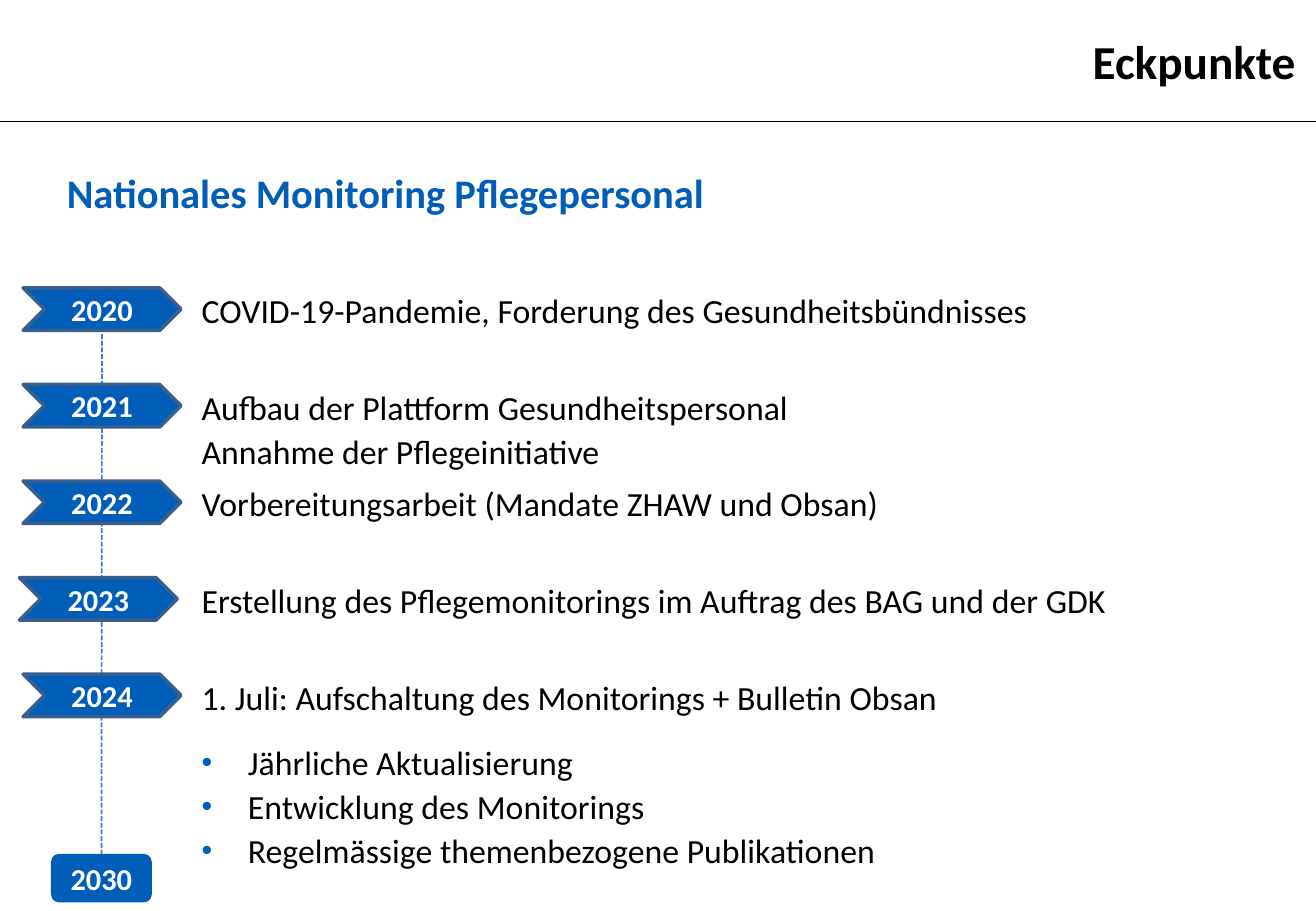
from lxml.etree import SubElement
from pptx import Presentation
from pptx.dml.color import RGBColor
from pptx.enum.dml import MSO_LINE as Dash
from pptx.enum.shapes import MSO_CONNECTOR as Conn, MSO_SHAPE as Shape
from pptx.enum.text import MSO_ANCHOR as Anchor, MSO_AUTO_SIZE as Fit, PP_ALIGN as Align
from pptx.oxml.ns import qn
from pptx.util import Inches, Pt

BLUE = RGBColor(0x00, 0x5E, 0xB8)
EDGE = RGBColor(0x3A, 0x5F, 0x8C)
DASH = RGBColor(0x4B, 0x7E, 0xBC)
BLACK = RGBColor(0, 0, 0)
WHITE = RGBColor(255, 255, 255)

TITLE = "Eckpunkte"
HEAD = "Nationales Monitoring Pflegepersonal"
YEARS = [
    ("2020", 0.19, ["COVID-19-Pandemie, Forderung des Gesundheitsbündnisses"]),
    ("2021", 0.19, ["Aufbau der Plattform Gesundheitspersonal",
                    "Annahme der Pflegeinitiative"]),
    ("2022", 0.19, ["Vorbereitungsarbeit (Mandate ZHAW und Obsan)"]),
    ("2023", 0.16, ["Erstellung des Pflegemonitorings im Auftrag des BAG und der GDK"]),
    ("2024", 0.19, ["1. Juli: Aufschaltung des Monitorings + Bulletin Obsan"]),
]
GOAL = "2030"
TASKS = [
    "Jährliche Aktualisierung",
    "Entwicklung des Monitorings",
    "Regelmässige themenbezogene Publikationen",
]

TOP, STEP, LINE = 2.37, 0.795, 0.36
LEFT, WIDE = 1.66, 8.86

FLAT = dict(margin_left=0, margin_right=0, margin_top=0, margin_bottom=0,
            word_wrap=True, auto_size=Fit.NONE, vertical_anchor=Anchor.TOP)
MID = dict(FLAT, vertical_anchor=Anchor.MIDDLE)
PLAIN = dict(size=Pt(20), name="Calibri", bold=False)
BOLD = dict(PLAIN, bold=True)


def apply(item, vals):
    for key, val in vals.items():
        setattr(item, key, val)


def place(item, *box):
    apply(item, dict(zip(("left", "top", "width", "height"), map(Inches, box))))


def write(para, text, font, color, **vals):
    para.text = text
    apply(para, dict(space_before=Pt(0), **vals))
    apply(para.font, font)
    para.font.color.rgb = color


def label(text, *box, font=PLAIN, color=BLACK, **vals):
    frame = slide.shapes.add_textbox(*map(Inches, box)).text_frame
    apply(frame, FLAT)
    write(frame.paragraphs[0], text, font, color, **vals)


def badge(kind, text, *box):
    shape = slide.shapes.add_shape(kind, *map(Inches, box))
    shape.shadow.inherit = False
    shape.fill.solid()
    shape.fill.fore_color.rgb = BLUE
    apply(shape.text_frame, MID)
    write(shape.text_frame.paragraphs[0], text, dict(BOLD, size=Pt(18)), WHITE,
          alignment=Align.CENTER)
    return shape


def rule(color, *ends):
    line = slide.shapes.add_connector(Conn.STRAIGHT, *map(Inches, ends))
    SubElement(line._element.spPr, qn("a:effectLst"))
    line.line.color.rgb = color
    line.line.width = Pt(1)
    return line


def bullet(para):
    props = para._p.get_or_add_pPr()
    props.set("marL", str(Inches(0.38)))
    props.set("indent", str(-Inches(0.38)))
    tint = SubElement(props, qn("a:buClr"))
    SubElement(tint, qn("a:srgbClr"), val=str(BLUE))
    SubElement(props, qn("a:buSzPct"), val="90000")
    SubElement(props, qn("a:buFont"), typeface="Arial")
    SubElement(props, qn("a:buChar"), char="•")


deck = Presentation()
deck.slide_width, deck.slide_height = Inches(10.83), Inches(7.5)
slide = deck.slides.add_slide(deck.slide_layouts[1])

title, body = slide.placeholders
place(title, 3.63, 0, 7.13, 1)
title.text_frame.vertical_anchor = Anchor.MIDDLE
write(title.text_frame.paragraphs[0], TITLE, dict(BOLD, size=Pt(28)), BLACK,
      alignment=Align.RIGHT)

place(body, LEFT, 6.08, WIDE, 1.2)
apply(body.text_frame, FLAT)
for num, task in enumerate(TASKS):
    para = body.text_frame.add_paragraph() if num else body.text_frame.paragraphs[0]
    bullet(para)
    write(para, task, PLAIN, BLACK, line_spacing=Pt(26))

rule(BLACK, 0, 1, 10.83, 1)
label(HEAD, 0.55, 1.38, 9.34, 0.4, font=dict(BOLD, size=Pt(24)), color=BLUE)

axis = rule(DASH, 0.84, 2.75, 0.84, 7.03)
axis.line.dash_style = Dash.SQUARE_DOT
goal = badge(Shape.ROUNDED_RECTANGLE, GOAL, 0.42, 7.03, 0.83, 0.4)
goal.line.fill.background()
axis.end_connect(goal, 0)

for row, (year, left, facts) in enumerate(YEARS):
    top = TOP + row * STEP
    arrow = badge(Shape.CHEVRON, year, left, top, 1.3, 0.35)
    arrow.line.color.rgb = EDGE
    arrow.line.width = Pt(2)
    for num, fact in enumerate(facts):
        label(fact, LEFT, top - 0.01 + num * LINE, WIDE, 0.35, line_spacing=Pt(26))

deck.save("out.pptx")
